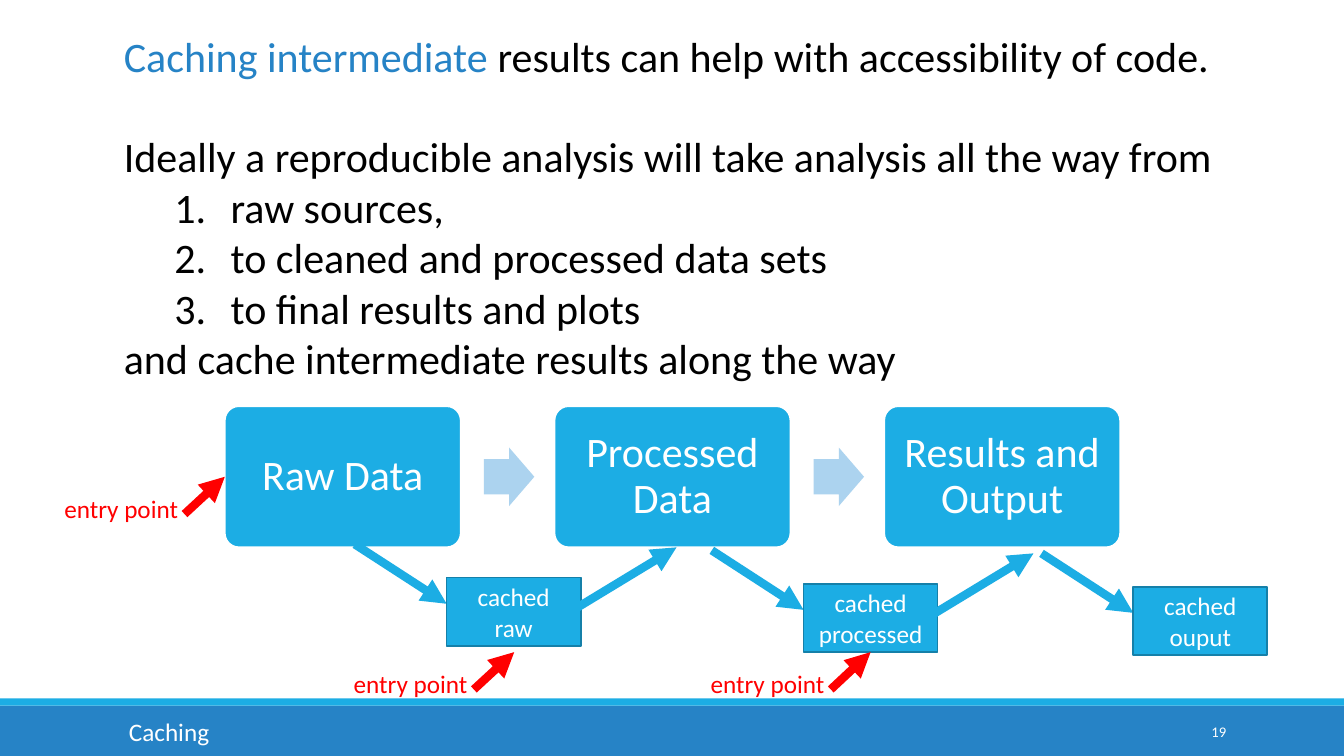
from pptx import Presentation
from pptx.dml.color import RGBColor
from pptx.enum.shapes import MSO_CONNECTOR, MSO_SHAPE
from pptx.enum.text import MSO_ANCHOR, PP_ALIGN
from pptx.oxml.ns import qn
from pptx.util import Inches, Pt
from lxml.etree import SubElement

COLORS = {
    "blue": "2683C6",
    "cyan": "1CADE4",
    "cyan_dark": "1580A9",
    "pale": "ACD3EF",
    "red": "FF0000",
    "white": "FFFFFF",
    "black": "000000",
}
LEFT_SIDE, BOTTOM_SIDE = 1, 2


def color(name):
    return RGBColor.from_string(COLORS[name])


def write(paragraph, text, size=18, fill="white", align=PP_ALIGN.LEFT):
    paragraph.alignment = align
    run = paragraph.add_run()
    run.text = text
    run.font.name = "Calibri"
    run.font.size = Pt(size)
    run.font.color.rgb = color(fill)


def add_block(slide, kind, left, top, width, height, fill, line=None):
    shape = slide.shapes.add_shape(
        kind, Inches(left), Inches(top), Inches(width), Inches(height))
    shape.shadow.inherit = False
    shape.fill.solid()
    shape.fill.fore_color.rgb = color(fill)
    if line:
        shape.line.color.rgb = color(line)
        shape.line.width = Pt(1.25)
    else:
        shape.line.fill.background()
    return shape


def add_text_box(slide, left, top, width, height, wrap=True):
    box = slide.shapes.add_textbox(
        Inches(left), Inches(top), Inches(width), Inches(height))
    box.text_frame.word_wrap = wrap
    return box.text_frame


def add_label(slide, text, left, top, width, fill="white"):
    frame = add_text_box(slide, left, top, width, 0.4, wrap=False)
    write(frame.paragraphs[0], text, fill=fill)


def add_arrow(slide, start, end, fill):
    arrow = slide.shapes.add_connector(
        MSO_CONNECTOR.STRAIGHT, *(Inches(value) for value in start + end))
    arrow.line.color.rgb = color(fill)
    arrow.line.width = Pt(6)
    SubElement(arrow.line._get_or_add_ln(), qn("a:tailEnd"), type="triangle")
    SubElement(arrow._element.spPr, qn("a:effectLst"))
    return arrow


def add_entry_point(slide, x, y):
    """Red label with an arrow whose tip is at x, y."""
    add_label(slide, "entry point", x - 1.69, y + 0.11, 1.34, "red")
    return add_arrow(slide, (x - 0.4, y + 0.37), (x, y), "red")


def add_stage(slide, text, left):
    stage = add_block(slide, MSO_SHAPE.ROUNDED_RECTANGLE,
                      left, 4.03, 2.34, 1.4, "cyan", "white")
    stage.adjustments[0] = 0.1
    frame = stage.text_frame
    frame.word_wrap = True
    frame.vertical_anchor = MSO_ANCHOR.MIDDLE
    frame.margin_left = frame.margin_right = Inches(0.16)
    paragraph = frame.paragraphs[0]
    paragraph.line_spacing = 0.9
    write(paragraph, text, size=30, align=PP_ALIGN.CENTER)
    return stage


def add_stage_arrow(slide, left):
    arrow = add_block(slide, MSO_SHAPE.RIGHT_ARROW, left, 4.44, 0.5, 0.58, "pale")
    arrow.adjustments[0] = 0.6
    arrow.adjustments[1] = 0.5


def add_cache(slide, text, left, top, feeds_next):
    """Cache box with the arrow into it and the one on to the next stage."""
    add_arrow(slide, (left - 0.91, top - 0.33), (left, top + 0.26), "cyan")
    cache = add_block(slide, MSO_SHAPE.RECTANGLE,
                      left, top, 1.33, 0.68, "cyan", "cyan_dark")
    frame = cache.text_frame
    frame.word_wrap = True
    frame.vertical_anchor = MSO_ANCHOR.MIDDLE
    write(frame.paragraphs[0], "cached", align=PP_ALIGN.CENTER)
    write(frame.add_paragraph(), text, align=PP_ALIGN.CENTER)
    if feeds_next:
        add_arrow(slide, (left + 1.16, top + 0.38), (left + 2.28, top - 0.3), "cyan")
    return cache


def add_body(slide):
    frame = add_text_box(slide, 1.13, 0.25, 11.08, 3.7)
    heading = frame.paragraphs[0]
    write(heading, "Caching intermediate", size=30, fill="blue")
    write(heading, " results can help with accessibility of code.", size=30, fill="black")

    intro = frame.add_paragraph()
    intro.space_before = Pt(36)
    write(intro, "Ideally a reproducible analysis will take analysis all the way from",
          size=30, fill="black")

    for step in ("raw sources,", "to cleaned and processed data sets",
                 "to final results and plots"):
        item = frame.add_paragraph()
        item.level = 1
        properties = item._p.get_or_add_pPr()
        properties.set("marL", str(Inches(1.06)))
        properties.set("indent", str(Inches(-0.56)))
        SubElement(properties, qn("a:buFont"), typeface="+mj-lt")
        SubElement(properties, qn("a:buAutoNum"), type="arabicPeriod")
        write(item, step, size=30, fill="black")

    write(frame.add_paragraph(), "and cache intermediate results along the way",
          size=30, fill="black")


def add_footer(slide):
    add_block(slide, MSO_SHAPE.RECTANGLE, 0, 7, 13.33, 0.5, "blue")
    add_block(slide, MSO_SHAPE.RECTANGLE, 0, 6.93, 13.33, 0.07, "cyan")
    add_label(slide, "Caching", 1.18, 7.06, 1.01)
    number = add_text_box(slide, 10.83, 7.06, 1.43, 0.4)
    number.vertical_anchor = MSO_ANCHOR.MIDDLE
    write(number.paragraphs[0], "19", size=10.5, align=PP_ALIGN.RIGHT)


def main():
    presentation = Presentation()
    presentation.slide_width = Inches(13.33)
    presentation.slide_height = Inches(7.5)
    slide = presentation.slides.add_slide(presentation.slide_layouts[6])

    add_footer(slide)
    add_body(slide)

    # Three stages, an arrow after each but the last
    names = ("Raw Data", "Processed Data", "Results and Output")
    stages = []
    for index, name in enumerate(names):
        left = 2.23 + 3.27 * index
        stages.append(add_stage(slide, name, left))
        if index < len(names) - 1:
            add_stage_arrow(slide, left + 2.57)

    # Cached results below the stages
    caches = [add_cache(slide, text, left, top, feeds_next)
              for text, left, top, feeds_next in (
                  ("raw", 4.43, 5.73, True),
                  ("processed", 7.97, 5.79, True),
                  ("ouput", 11.24, 5.82, False))]

    # Entry points
    add_entry_point(slide, 2.23, 4.73).end_connect(stages[0], LEFT_SIDE)
    add_entry_point(slide, 5.1, 6.47)
    add_entry_point(slide, 8.64, 6.47).end_connect(caches[1], BOTTOM_SIDE)

    presentation.save("out.pptx")


if __name__ == "__main__":
    main()
